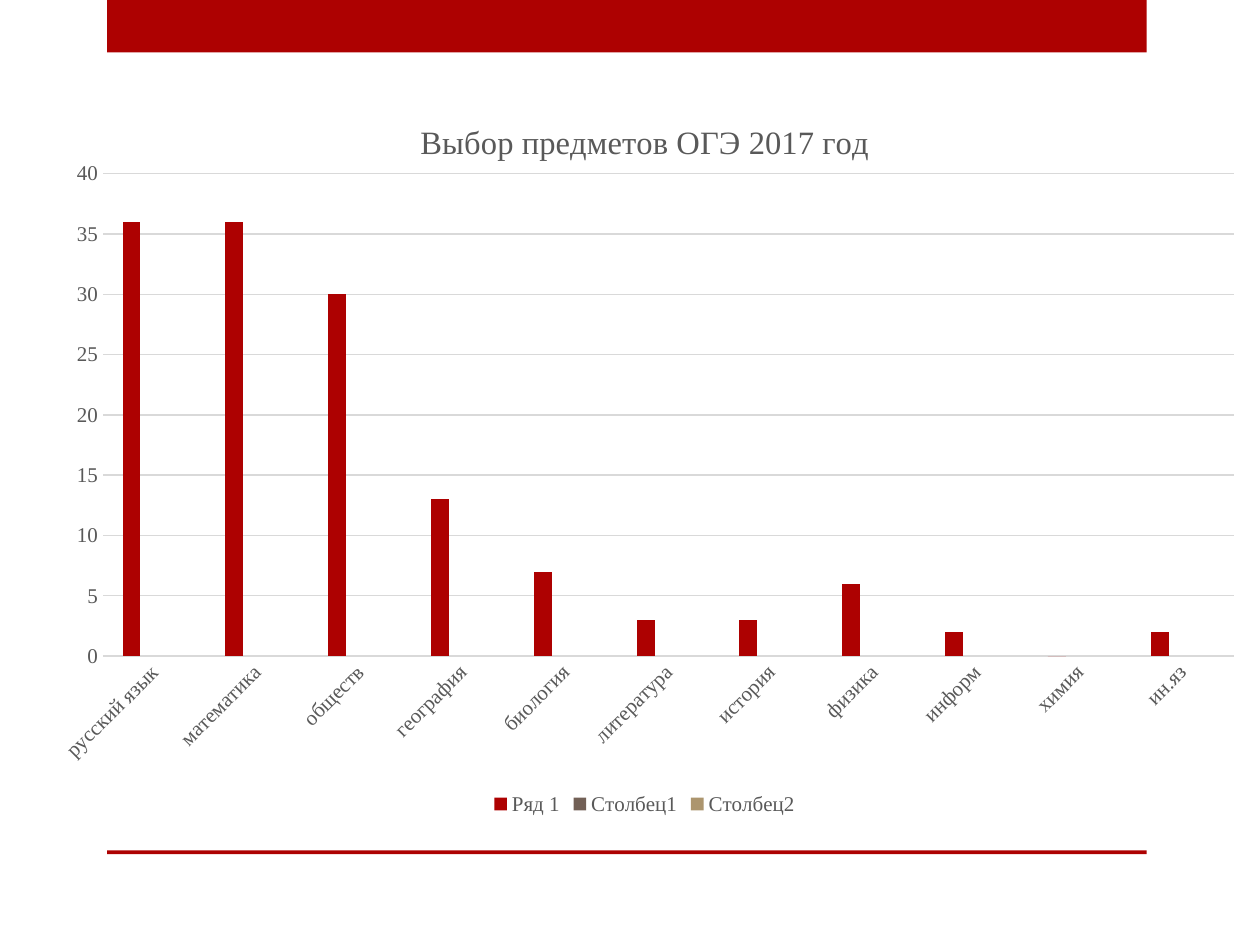
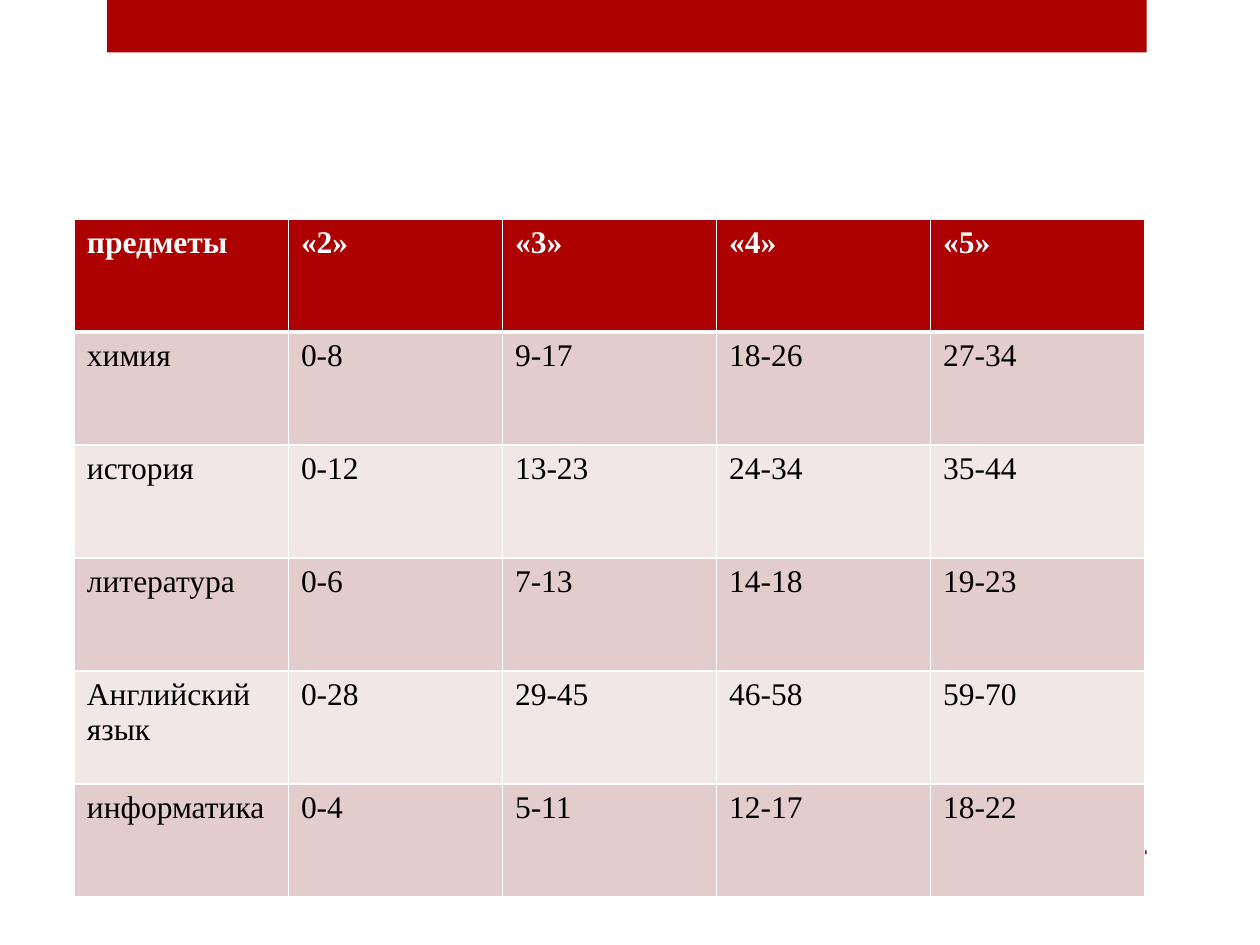
from dataclasses import dataclass

from pptx import Presentation
from pptx.chart.data import CategoryChartData
from pptx.dml.color import RGBColor as RGB
from pptx.enum.chart import XL_CHART_TYPE as ChartType
from pptx.enum.chart import XL_LEGEND_POSITION as LegendPos
from pptx.enum.chart import XL_TICK_MARK as TickMark
from pptx.enum.shapes import MSO_SHAPE as Shape
from pptx.oxml import parse_xml
from pptx.oxml.ns import nsdecls
from pptx.util import Inches, Pt

WIDTH, HEIGHT = Inches(10), Inches(7.5)


@dataclass(frozen=True)
class Theme:
    font: str = "Times New Roman"
    red: str = "AD0101"
    brown: str = "726056"
    sand: str = "AC956E"
    grey: str = "595959"
    grid: str = "D9D9D9"
    white: str = "FFFFFF"
    black: str = "000000"
    stripes: tuple = ("E3CCCC", "F1E7E7")
    label_size: float = 12
    title_size: float = 18.6
    table_size: float = 18


THEME = Theme()

SUBJECT_CHOICES = {
    "русский язык": 36, "математика": 36, "обществ": 30, "география": 13,
    "биология": 7, "литература": 3, "история": 3, "физика": 6,
    "информ": 2, "химия": 0, "ин.яз": 2,
}
GRADE_SCALE = [
    ("предметы", "«2»", "«3»", "«4»", "«5»"),
    ("химия", "0-8", "9-17", "18-26", "27-34"),
    ("история", "0-12", "13-23", "24-34", "35-44"),
    ("литература", "0-6", "7-13", "14-18", "19-23"),
    ("Английский язык", "0-28", "29-45", "46-58", "59-70"),
    ("информатика", "0-4", "5-11", "12-17", "18-22"),
]


def area(left, top, width, height):
    """Turn percentages of the slide's size into lengths."""
    return (round(left * WIDTH / 100), round(top * HEIGHT / 100),
            round(width * WIDTH / 100), round(height * HEIGHT / 100))


def set_font(font, size, color, bold=False):
    font.name = THEME.font
    font.size = Pt(size)
    font.bold = bold
    font.color.rgb = RGB.from_string(color)


def set_fill(target, color):
    target.fill.solid()
    target.fill.fore_color.rgb = RGB.from_string(color)


def set_line(line, color, width=0.75):
    line.color.rgb = RGB.from_string(color)
    line.width = Pt(width)


def add_master_bands(prs, slide):
    """Draw the top and bottom bands once and hand them to the slide master."""
    tree = prs.slide_master.shapes._spTree
    for number, (top, height) in enumerate([(0, 5.55), (90, 0.4)], start=1):
        sp = slide.shapes.add_shape(Shape.RECTANGLE,
                                    *area(8.5, top, 82.5, height))
        sp.shadow.inherit = False
        set_fill(sp, THEME.red)
        sp.line.fill.background()
        sp.name = f"Band {number}"
        sp._element.nvSpPr.cNvPr.set("id", str(100 + number))
        tree.append(sp._element)


def manual_layout(x, y, w=None, h=None):
    """Layout in percent of the chart; with a size it places the inner plot."""
    parts = ['<c:layoutTarget val="inner"/>'] if w else []
    parts += [f'<c:{side}Mode val="edge"/>' for side in "xy"]
    parts += [f'<c:{name} val="{share / 100:.4f}"/>'
              for name, share in zip("xywh", (x, y, w, h)) if share is not None]
    return parse_xml(f'<c:layout {nsdecls("c")}><c:manualLayout>'
                     f'{"".join(parts)}</c:manualLayout></c:layout>')


def place(element, layout):
    """Replace the layout of a chart title or a plot area."""
    for old in element.findall(layout.tag):
        element.remove(old)
    has_text = element.find(layout.tag.replace("layout", "tx")) is not None
    element.insert(1 if has_text else 0, layout)


def style_axes(chart):
    for axis in (chart.category_axis, chart.value_axis):
        axis.major_tick_mark = axis.minor_tick_mark = TickMark.NONE
        set_font(axis.tick_labels.font, THEME.label_size, THEME.grey)
    categories, values = chart.category_axis, chart.value_axis
    set_line(categories.format.line, THEME.grid)
    categories._element.txPr.bodyPr.set("rot", "-2700000")
    values.minimum_scale, values.maximum_scale, values.major_unit = 0, 40, 5
    values.format.line.fill.background()
    set_line(values.major_gridlines.format.line, THEME.grid)


def add_column_chart(slide, title, choices):
    data = CategoryChartData()
    data.categories = list(choices)
    data.add_series("Ряд 1", choices.values())
    for name in ("Столбец1", "Столбец2"):
        data.add_series(name, [None] * len(choices))
    chart = slide.shapes.add_chart(ChartType.COLUMN_CLUSTERED,
                                   *area(3.5, 10, 95.3, 76.8), data).chart
    set_font(chart.font, THEME.label_size, THEME.grey)

    r = chart.chart_title.text_frame.paragraphs[0].add_run()
    r.text = title
    set_font(r.font, THEME.title_size, THEME.grey)
    chart.chart_title.include_in_layout = False
    place(chart.chart_title._element, manual_layout(30.85, 2.9))

    chart.has_legend = True
    chart.legend.position = LegendPos.BOTTOM
    chart.legend.include_in_layout = False
    set_font(chart.legend.font, THEME.label_size, THEME.grey)

    style_axes(chart)
    plot = chart.plots[0]
    plot.gap_width, plot.overlap = 219, -27
    plot.vary_by_categories = False
    for series, color in zip(plot.series, (THEME.red, THEME.brown, THEME.sand)):
        set_fill(series.format, color)
    place(chart._chartSpace.chart.plotArea,
          manual_layout(4.9, 10.9, 94.2, 66.5))


def set_borders(cell, bottom=1.0, top=1.0):
    properties = cell._tc.get_or_add_tcPr()
    widths = {"lnL": 1, "lnR": 1, "lnT": top, "lnB": bottom}
    for position, (tag, width) in enumerate(widths.items()):
        properties.insert(position, parse_xml(
            f'<a:{tag} {nsdecls("a")} w="{Pt(width)}"><a:solidFill>'
            f'<a:srgbClr val="{THEME.white}"/></a:solidFill></a:{tag}>'))


def add_grade_table(slide, rows):
    frame = slide.shapes.add_table(len(rows), len(rows[0]),
                                   *area(5.9, 23.2, 84.95, 71.7))
    for i, row in enumerate(rows):
        header = i == 0
        for j, text in enumerate(row):
            cell = frame.table.cell(i, j)
            set_fill(cell, THEME.red if header else THEME.stripes[(i - 1) % 2])
            set_borders(cell, bottom=3 if header else 1, top=3 if i == 1 else 1)
            r = cell.text_frame.paragraphs[0].add_run()
            r.text = text
            set_font(r.font, THEME.table_size,
                     THEME.white if header else THEME.black, bold=header)


def main():
    prs = Presentation()
    prs.slide_width, prs.slide_height = WIDTH, HEIGHT
    blank = prs.slide_layouts[6]

    choices_slide = prs.slides.add_slide(blank)
    add_master_bands(prs, choices_slide)
    add_column_chart(choices_slide, "Выбор предметов ОГЭ 2017 год",
                     SUBJECT_CHOICES)

    grades_slide = prs.slides.add_slide(blank)
    add_grade_table(grades_slide, GRADE_SCALE)

    prs.save("out.pptx")


if __name__ == "__main__":
    main()
